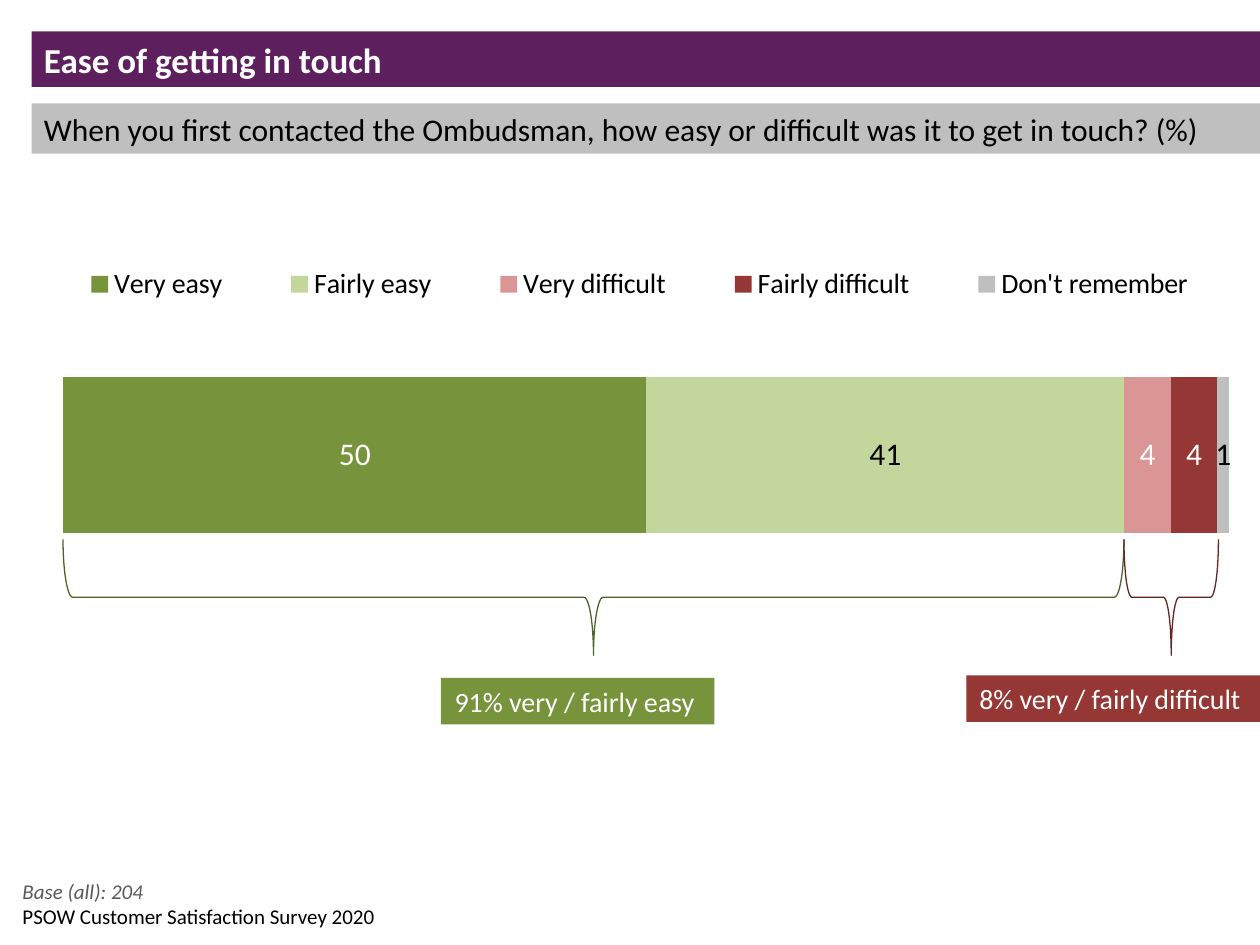
from dataclasses import dataclass

from lxml import etree
from pptx import Presentation
from pptx import util as u
from pptx.chart import data as chart_data
from pptx.dml.color import RGBColor
from pptx.enum import chart as charts, shapes, text
from pptx.oxml.ns import qn


@dataclass(frozen=True)
class Theme:
    font: str = "Calibri"
    purple: str = "5D1F5E"
    grey: str = "BFBFBF"
    dark_grey: str = "595959"
    green: str = "77933C"
    light_green: str = "C3D69B"
    green_line: str = "4F6228"
    red: str = "953735"
    light_red: str = "D99694"
    red_line: str = "632523"
    white: str = "FFFFFF"
    black: str = "000000"
    title: int = 20
    body: int = 18
    label: int = 16
    note: int = 12


theme = Theme()


def add_label(box, words, size, color, fill=None, align=text.PP_ALIGN.LEFT, wrap=True, **style):
    """Add a rectangle of text, filled when a fill colour is given."""
    shape = slide.shapes.add_shape(shapes.MSO_SHAPE.RECTANGLE, *map(u.Inches, box)) if fill \
        else slide.shapes.add_textbox(*map(u.Inches, box))
    if fill:
        shape.shadow.inherit = False
        shape.fill.solid()
        shape.fill.fore_color.rgb = RGBColor.from_string(fill)
        shape.line.fill.background()
    frame = shape.text_frame
    frame.word_wrap = wrap
    frame.auto_size = text.MSO_AUTO_SIZE.SHAPE_TO_FIT_TEXT
    paragraph = frame.paragraphs[0]
    paragraph.alignment = align
    run = paragraph.add_run()
    run.text = words
    set_font(run.font, size, color, **style)


def set_font(font, size, color, **style):
    values = {"name": theme.font, "size": u.Pt(size), **style}
    for name, value in values.items():
        setattr(font, name, value)
    font.color.rgb = RGBColor.from_string(color)


presentation = Presentation()
presentation.slide_width, presentation.slide_height = u.Inches(10), u.Inches(7.5)
slide = presentation.slides.add_slide(presentation.slide_layouts[6])

# Heading, question and footnotes
add_label((0.08, 7.12, 5.25, 0.3), "PSOW Customer Satisfaction Survey 2020", theme.note, theme.black)
add_label((0.25, 0.25, 9.75, 0.44), "Ease of getting in touch",
          theme.title, theme.white, theme.purple, bold=True)
add_label((0.25, 0.82, 9.75, 0.4),
          "When you first contacted the Ombudsman, how easy or difficult was it to get in touch? (%)",
          theme.body, theme.black, theme.grey)
add_label((0.08, 6.92, 7.25, 0.3), "Base (all): 204", theme.note, theme.dark_grey, italic=True)

# Stacked bar of answers: name, value, fill colour, label colour
answers = [
    ("Very easy", 50, theme.green, theme.white),
    ("Fairly easy", 41, theme.light_green, theme.black),
    ("Very difficult", 4, theme.light_red, theme.white),
    ("Fairly difficult", 4, theme.red, theme.white),
    ("Don't remember", 1, theme.grey, theme.black),
]
answer_data = chart_data.CategoryChartData()
answer_data.categories = ["1"]
for name, value, _, _ in answers:
    answer_data.add_series(name, [value])
chart = slide.shapes.add_chart(
    charts.XL_CHART_TYPE.BAR_STACKED_100,
    *map(u.Inches, (0.25, 2.04, 9.75, 3.32)), answer_data).chart
chart.has_title = False
set_font(chart.font, theme.body, theme.black)
chart.category_axis.reverse_order = True
for axis in (chart.category_axis, chart.value_axis):
    axis.has_major_gridlines = False
    axis.visible = False

plot = chart.plots[0]
for name, value in {"gap_width": 75, "overlap": 100, "vary_by_categories": False}.items():
    setattr(plot, name, value)
for series, (_, _, fill, label_color) in zip(plot.series, answers):
    series.format.fill.solid()
    series.format.fill.fore_color.rgb = RGBColor.from_string(fill)
    series.data_labels.show_value = True
    set_font(series.data_labels.font, theme.body, label_color)

chart.has_legend = True
chart.legend.position = charts.XL_LEGEND_POSITION.RIGHT
chart.legend.include_in_layout = False
set_font(chart.legend.font, theme.label, theme.black)

# Fixed places for the plot and legend, as shares of the chart
layouts = [
    ("c:plotArea", "c:barChart", "inner", (0.026, 0.146, 0.949, 0.653)),
    ("c:legend", "c:overlay", None, (0, 0, 0.99, 0.13)),
]
for parent_tag, next_tag, target, place in layouts:
    parent = chart._chartSpace.find(".//" + qn(parent_tag))
    for old_layout in parent.findall(qn("c:layout")):
        parent.remove(old_layout)
    layout = etree.Element(qn("c:layout"))
    manual = etree.SubElement(layout, qn("c:manualLayout"))
    settings = {"layoutTarget": target} if target else {}
    settings.update(xMode="edge", yMode="edge", **dict(zip("xywh", place)))
    for tag, value in settings.items():
        etree.SubElement(manual, qn("c:" + tag)).set("val", str(value))
    parent.find(qn(next_tag)).addprevious(layout)

# Braces under the bar, each with its total
brace_top, brace_depth = 4.28, 0.92
totals = [
    (0.5, 8.92, theme.green_line, theme.green, (3.5, 5.38, 2.17, 0.37), "91% very / fairly easy "),
    (8.92, 9.67, theme.red_line, theme.red, (7.67, 5.36, 2.33, 0.37), "8% very / fairly difficult "),
]
for start, end, line_color, fill, box, words in totals:
    span = end - start
    brace = slide.shapes.add_shape(
        shapes.MSO_SHAPE.RIGHT_BRACE,
        u.Inches((start + end - brace_depth) / 2),
        u.Inches(brace_top + (brace_depth - span) / 2),
        u.Inches(brace_depth), u.Inches(span))
    brace.rotation = 90
    brace.shadow.inherit = False
    brace.fill.background()
    brace.line.color.rgb = RGBColor.from_string(line_color)
    brace.line.width = u.Pt(0.75)
    add_label(box, words, theme.label, theme.white, fill, text.PP_ALIGN.CENTER, wrap=False)

presentation.save("out.pptx")
